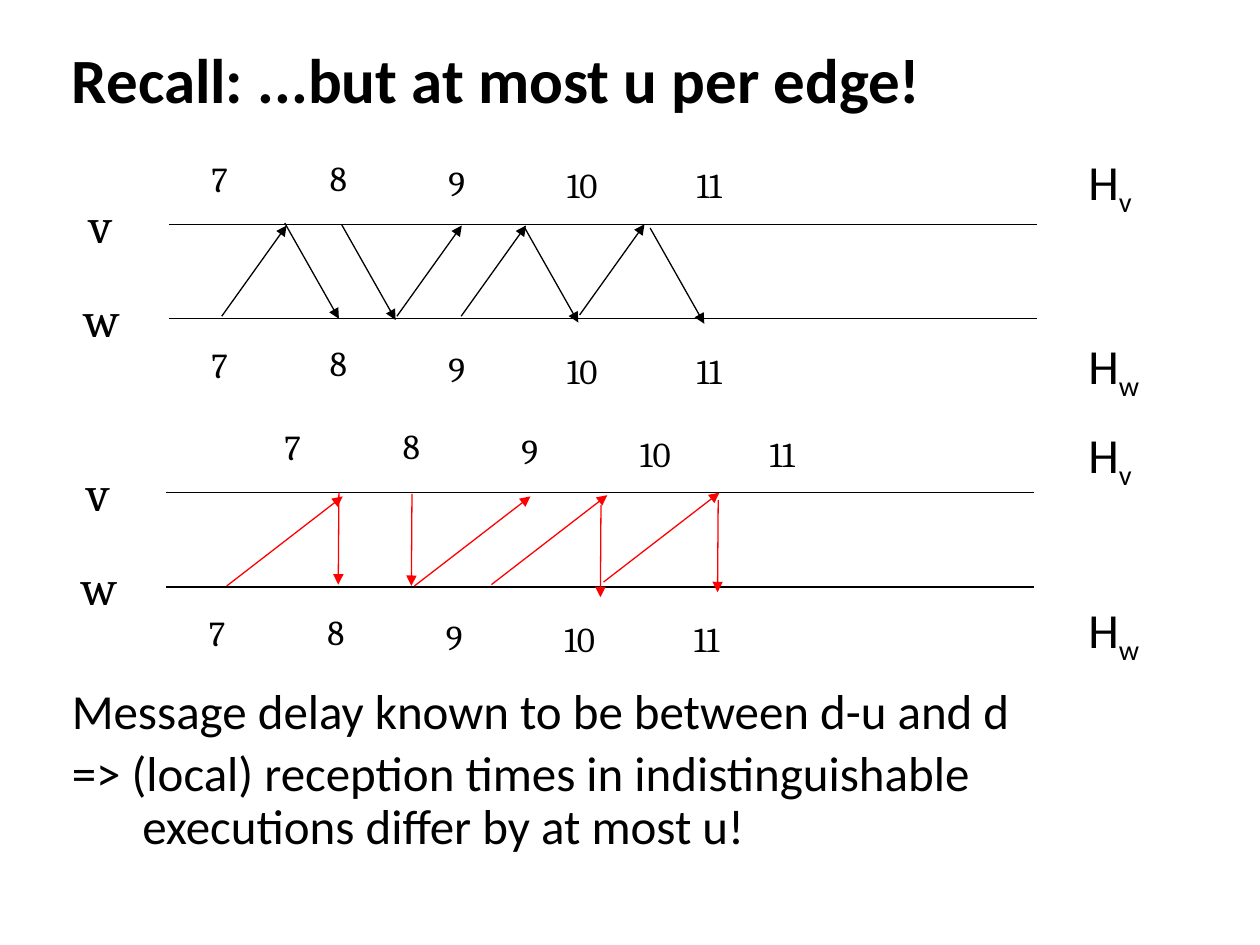
"""Build a slide on message delays between two clocks, with two timing diagrams."""
import pptx
import pptx.dml.color
import pptx.enum.shapes
import pptx.enum.text
import pptx.oxml.ns
import pptx.util
from lxml import etree

deck = pptx.Presentation()
deck.slide_width, deck.slide_height = pptx.util.Inches(10), pptx.util.Inches(7.5)
column, row = deck.slide_width / 100, deck.slide_height / 75
slide = deck.slides.add_slide(deck.slide_layouts[1])


def write(paragraph, text, font="Calibri", size=28, bold=False, color="000000", baseline=None):
    run = paragraph.add_run()
    run.text = text
    run.font.name, run.font.size, run.font.bold = font, pptx.util.Pt(size), bold
    run.font.color.rgb = pptx.dml.color.RGBColor.from_string(color)
    if baseline:
        run._r.get_or_add_rPr().set("baseline", str(baseline * 1000))


def draw_line(x, y, across, down, color="000000", arrow=False):
    line = slide.shapes.add_connector(
        pptx.enum.shapes.MSO_CONNECTOR.STRAIGHT,
        round(x * column), round(y * row),
        round((x + across) * column), round((y + down) * row))
    line.line.color.rgb = pptx.dml.color.RGBColor.from_string(color)
    line.line.width = pptx.util.Pt(0.75)
    if arrow:
        etree.SubElement(line.line._get_or_add_ln(), pptx.oxml.ns.qn("a:tailEnd"), type="triangle")
    etree.SubElement(line._element.spPr, pptx.oxml.ns.qn("a:effectLst"))


heading, conclusion = slide.shapes.title, slide.placeholders[1]
for holder, left, top, width, height, anchor in (
        (heading, 4.7, 2.5, 91.9, 7.5, pptx.enum.text.MSO_ANCHOR.MIDDLE),
        (conclusion, 4.7, 54, 89.4, 16.9, pptx.enum.text.MSO_ANCHOR.TOP)):
    holder.left, holder.top = round(left * column), round(top * row)
    holder.width, holder.height = round(width * column), round(height * row)
    holder.text_frame.vertical_anchor = anchor
    holder.text_frame.word_wrap = True
    holder.text_frame.auto_size = pptx.enum.text.MSO_AUTO_SIZE.NONE

title_line = heading.text_frame.paragraphs[0]
title_line.alignment = pptx.enum.text.PP_ALIGN.LEFT
write(title_line, "Recall: ...but at most u per edge!", size=36, bold=True)

statements = (
    "Message delay known to be between d-u and d",
    "=> (local) reception times in indistinguishable executions differ by at most u!")
for index, statement in enumerate(statements):
    body = conclusion.text_frame
    paragraph = body.add_paragraph() if index else body.paragraphs[0]
    paragraph.line_spacing, paragraph.space_before = 0.9, pptx.util.Pt(5.6)
    indents = paragraph._p.get_or_add_pPr()
    indents.set("marL", str(round(5.6 * column)))
    indents.set("indent", str(round(-5.6 * column)))
    etree.SubElement(indents, pptx.oxml.ns.qn("a:buNone"))
    write(paragraph, statement)

ticks = (("7", 2.4, -5.8, 3.4), ("8", 11.8, -5.9, 3.4), ("9", 21.2, -5.5, 3.4),
         ("10", 30.6, -5.3, 4.8), ("11", 40.9, -5.3, 4.7))
diagrams = (
    {"origin": (13.4, 17.8), "upper_shift": 0, "color": "000000", "messages": (
        ((5.15, -7.2), ((4.2, 7.3), (18.1, 7.3), (23.2, 7.3), (32.6, 7.2))),
        ((4.3, 7.6), ((9.2, -0.1), (13.7, 0), (28.2, 0.2), (38.2, 0.3))))},
    {"origin": (13.2, 39.1), "upper_shift": 6, "color": "FF0000", "messages": (
        ((9.2, -7.1), ((4.8, 7.4), (19.7, 7.4), (25.8, 7.3), (34.7, 7.1))),
        ((-0.05, 7.3), ((13.7, 0), (19.5, 0.1), (34.5, 1), (43.8, 0.6))))})

labels = [("H", node, 85.4, top, width, 5.7, "Calibri", 28)
          for node, top, width in (("v", 11.5, 5.6), ("v", 33.2, 5.6), ("w", 26.1, 6.3), ("w", 47.1, 6.3))]
for diagram in diagrams:
    x, y = diagram["origin"]
    for node, left, top, width, timeline in (("v", -7.3, -2.85, 4, 0), ("w", -7.7, 4.6, 4.9, 7.5)):
        draw_line(x, y + timeline, 68.9, 0)
        labels.append((node, "", x + left, y + top, width, 5.7, "Cambria", 28))
    for tick, left, top, width in ticks:
        for shift, drop in ((diagram["upper_shift"], 0), (0, 14.75)):
            labels.append((tick, "", x + left + shift, y + top + drop, width, 4.4, "Cambria", 20))
    for (across, down), starts in diagram["messages"]:
        for start_x, start_y in starts:
            draw_line(x + start_x, y + start_y, across, down, diagram["color"], arrow=True)

for text, subscript, left, top, width, height, font, size in labels:
    label = slide.shapes.add_textbox(
        round(left * column), round(top * row), round(width * column), round(height * row)).text_frame
    label.word_wrap = False
    label.auto_size = pptx.enum.text.MSO_AUTO_SIZE.SHAPE_TO_FIT_TEXT
    write(label.paragraphs[0], text, font=font, size=size)
    if subscript:
        write(label.paragraphs[0], subscript, font=font, size=size, baseline=-25)

deck.save("out.pptx")
